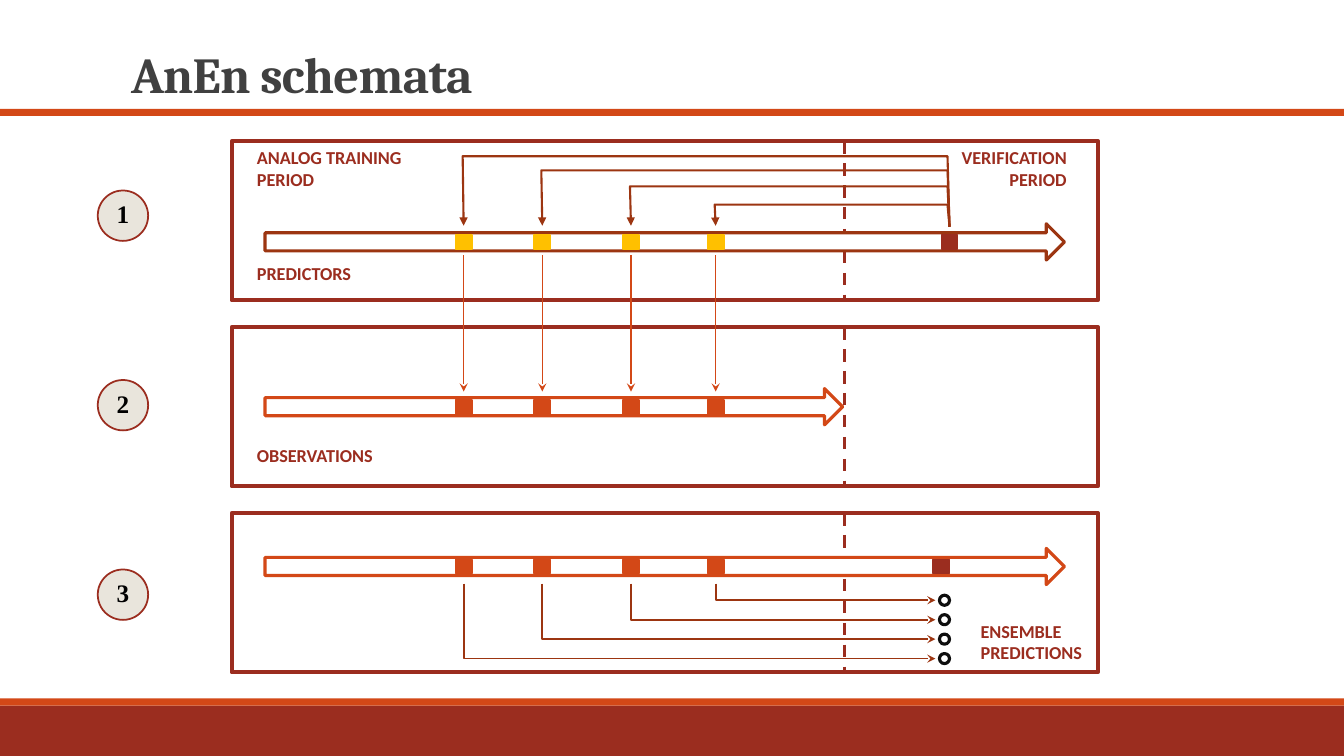
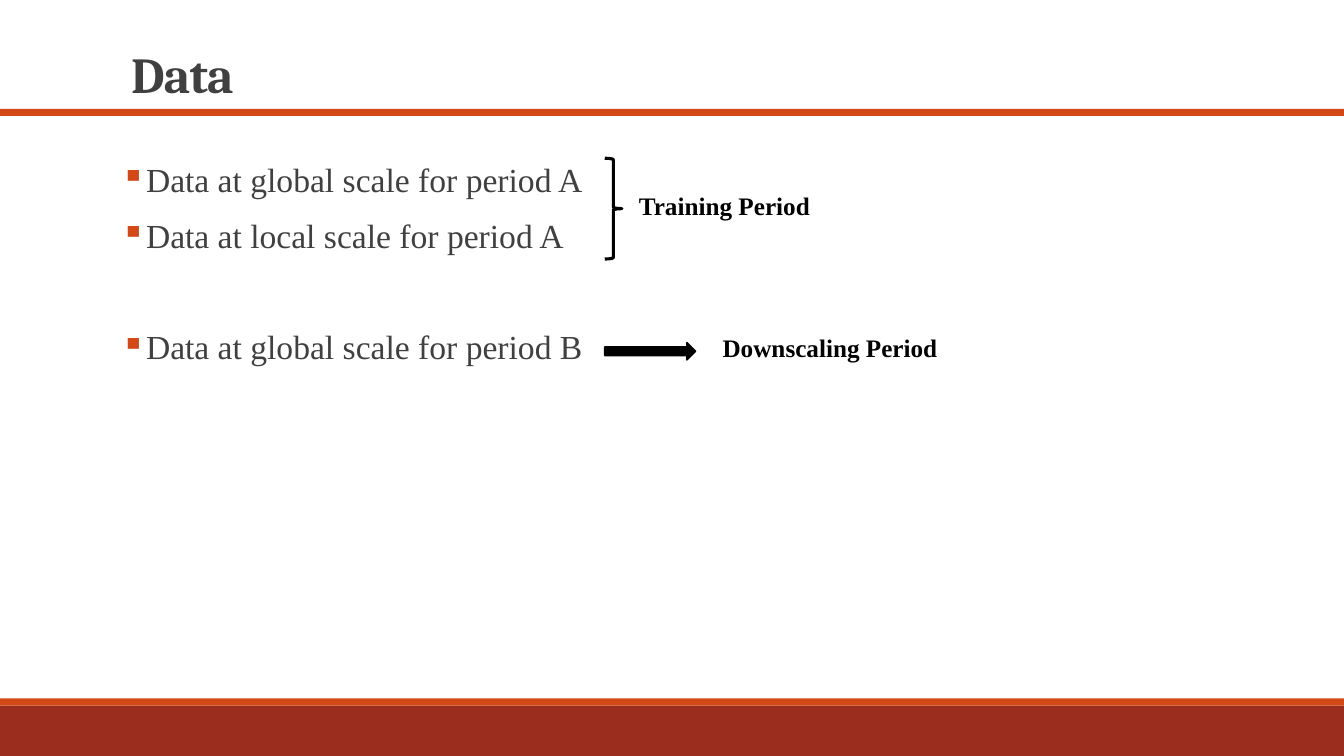
from lxml import etree
from pptx import Presentation, util as u
from pptx.dml.color import RGBColor
from pptx.enum import dml, shapes, text
from pptx.oxml import ns

CELL = u.Inches(0.1)
COLS, ROWS = 133.33, 75
RED, ORANGE, RUST, GOLD = "9B2D1F", "D34817", "9C3511", "FFC000"
WHITE, BLACK, GREY, SAND, INK = "FFFFFF", "000000", "404040", "E9E5DC", "0D0D0D"
TIMES = "Times New Roman"
KIND = shapes.MSO_SHAPE
ALIGN = text.PP_ALIGN
ANCHOR = text.MSO_ANCHOR
MARKS = [23, 30.8, 39.6, 48]
SPLIT = 60.8


def grid(*cells):
    """Turn grid cells into slide lengths."""
    return [round(c * CELL) for c in cells]


def paint(part, hue):
    """Give a fill, line or font colour a hex string."""
    if hasattr(part, "solid"):
        part.solid()
        part = part.fore_color
    elif hasattr(part, "color"):
        part = part.color
    part.rgb = RGBColor.from_string(hue)


def node(par, tag, **attrs):
    """Append a drawing element to its parent."""
    return etree.SubElement(par, ns.qn(tag), **attrs)


def stroke(item, hue, width, dash=None, tip=None):
    """Format a line with its dash and arrowhead."""
    paint(item.line, hue)
    item.line.width = u.Pt(width)
    if dash:
        item.line.dash_style = dash
    if tip:
        node(item.line._get_or_add_ln(), "a:tailEnd", type=tip)


def shape(slide, kind, box, fill=None, line=None, width=1.25):
    """Draw a preset shape in a box of cells."""
    item = slide.shapes.add_shape(kind, *grid(*box))
    item.shadow.inherit = False
    if fill:
        paint(item.fill, fill)
    else:
        item.fill.background()
    if line:
        stroke(item, line, width)
    else:
        item.line.fill.background()
    return item


def line(slide, start, end, hue, width, **style):
    """Draw a straight line between two cells."""
    item = slide.shapes.add_connector(
        shapes.MSO_CONNECTOR.STRAIGHT, *grid(*start, *end))
    stroke(item, hue, width, **style)
    node(item._element.spPr, "a:effectLst")


def route(slide, points, hue, width, tip):
    """Draw an open bent arrow through points."""
    dots = [grid(*p) for p in points]
    pen = slide.shapes.build_freeform(*dots[0], scale=1.0)
    pen.add_line_segments(dots[1:], close=False)
    item = pen.convert_to_shape()
    item.shadow.inherit = False
    item.fill.background()
    stroke(item, hue, width, tip=tip)


def write(par, words, font="Calibri", size=13, hue=RED, bold=True,
          align=ALIGN.LEFT, space=None):
    """Put formatted words in a paragraph."""
    par.alignment = align
    run = par.add_run()
    run.text = words
    run.font.name, run.font.size, run.font.bold = font, u.Pt(size), bold
    paint(run.font, hue)
    if space:
        run._r.get_or_add_rPr().set("spc", str(space))


def label(slide, box, words, **style):
    """Add a wrapped text box with one paragraph."""
    frame = slide.shapes.add_textbox(*grid(*box)).text_frame
    frame.word_wrap = True
    write(frame.paragraphs[0], words, **style)


def bands(slide, layout):
    """Place the shared bands on the layout."""
    for top, high, hue in ((70, 5, RED), (69.3, 0.7, ORANGE), (10.8, 0.7, ORANGE)):
        band = shape(slide, KIND.RECTANGLE, (0, top, COLS, high), hue)
        layout.shapes.element.append(band._element)


def page(deck, words):
    """Add a slide and set its title."""
    slide = deck.slides.add_slide(deck.slide_layouts[5])
    title = slide.shapes.title
    title.left, title.top, title.width, title.height = grid(12, 3.1, 110, 7.7)
    title.text_frame.vertical_anchor = ANCHOR.BOTTOM
    par = title.text_frame.paragraphs[0]
    par.line_spacing = 0.85
    write(par, words, font="Cambria", size=36, hue=GREY, space=-50)
    return slide


def panel(slide, x, y):
    """Draw a framed panel with its period split."""
    shape(slide, KIND.RECTANGLE, (x, y, 85.9, 15.8), line=RED, width=3)
    line(slide, (x + SPLIT, y), (x + SPLIT, y + 16), RED, 2.25,
         dash=dml.MSO_LINE.DASH)


def track(slide, x, y, wide, edge, hue, last=None):
    """Draw a time arrow with its marked moments."""
    shape(slide, KIND.RIGHT_ARROW, (x + 3.3, y, wide, 3.6), WHITE, edge, 2.25)
    spots = [(m, hue) for m in MARKS] + ([(last, RED)] if last else [])
    for mid, tint in spots:
        shape(slide, KIND.RECTANGLE, (x + mid - 0.8, y + 1.1, 1.6, 1.4), tint, tint)


def badge(slide, x, y, words):
    """Draw a numbered circle."""
    item = shape(slide, KIND.OVAL, (x, y, 5, 5), SAND, RED)
    frame = item.text_frame
    frame.margin_left = frame.margin_right = 0
    frame.margin_top, frame.margin_bottom = 0, u.Pt(3)
    frame.vertical_anchor = ANCHOR.MIDDLE
    write(frame.paragraphs[0], words, font=TIMES, size=18, hue=BLACK,
          align=ALIGN.CENTER)


def train(slide, x, y):
    """Fill the panel of predictors."""
    label(slide, (x + 1.5, y, 17, 5.4), "ANALOG TRAINING PERIOD")
    label(slide, (x + 66.8, y, 17, 5.4), "VERIFICATION PERIOD", align=ALIGN.RIGHT)
    for mark, rise in zip(MARKS, (1.5, 2.9, 4.5, 6.3)):
        route(slide, [(x + 71.2, y + 8.5), (x + 71, y + rise),
                      (x + mark - 0.1, y + rise), (x + mark, y + 8.4)],
              RUST, 1.5, "triangle")
    track(slide, x, y + 8.2, 79.3, RUST, GOLD, 71.2)
    label(slide, (x + 1.5, y + 11.5, 17, 3.2), "PREDICTORS")


def observe(slide, x, y):
    """Fill the panel of observations."""
    label(slide, (x + 1.5, y + 11.1, 17, 3.2), "OBSERVATIONS")
    track(slide, x, y + 6.1, 57.3, ORANGE, ORANGE)
    for mark in MARKS:
        line(slide, (x + mark, y - 7.1), (x + mark, y + 6.4), ORANGE, 1,
             tip="stealth")


def predict(slide, x, y):
    """Fill the panel of ensemble predictions."""
    track(slide, x, y + 3.5, 79.3, ORANGE, ORANGE, 70.4)
    for step, mark in enumerate(reversed(MARKS)):
        level = y + 8.65 + 1.93 * step
        route(slide, [(x + mark, y + 7), (x + mark, level), (x + 69.8, level)],
              RUST, 1.25, "stealth")
        shape(slide, KIND.OVAL, (x + 70.2, level - 0.5, 1, 1), WHITE, INK, 2.25)
    label(slide, (x + 73.3, y + 10.1, 17, 5.4), "ENSEMBLE PREDICTIONS")


def schema(deck):
    """Build the slide of three stacked panels."""
    slide = page(deck, "AnEn schemata")
    bands(slide, deck.slide_layouts[5])
    for row, fill in enumerate((train, observe, predict)):
        x, y = 23, 14 + 18.45 * row
        panel(slide, x, y)
        fill(slide, x, y)
        badge(slide, 9.7, 18.9 + 18.8 * row, str(row + 1))


def points(slide, box, rows):
    """Write a bulleted list of words and space before."""
    frame = slide.shapes.add_textbox(*grid(*box)).text_frame
    frame.word_wrap = True
    frame.margin_left = frame.margin_right = 0
    for at, (words, gap) in enumerate(rows):
        par = frame.add_paragraph() if at else frame.paragraphs[0]
        par.line_spacing = 0.9
        par.space_before, par.space_after = u.Pt(gap), u.Pt(2)
        write(par, words, font=TIMES, size=24, hue=GREY, bold=False)
        props = par._p.get_or_add_pPr()
        hang = u.Inches(0.19)
        props.set("marL", str(hang))
        props.set("indent", str(-hang))
        node(node(props, "a:buClr"), "a:srgbClr", val=ORANGE)
        node(props, "a:buChar", char="▪")


def data(deck):
    """Build the slide of data periods."""
    slide = page(deck, "Data")
    x, y = 12, 15.7
    points(slide, (x, y, 110, 48.6), [
        ("Data at global scale for period A", 12),
        ("Data at local scale for period A", 12),
        ("Data at global scale for period B", 52)])
    shape(slide, KIND.RIGHT_BRACE, (x + 48, y, 1.7, 10), line=BLACK, width=2.25)
    shape(slide, KIND.RIGHT_ARROW, (x + 48, y + 18.3, 9, 1.7), BLACK, BLACK)
    for left, top, words in ((50.4, 2.7, "Training Period"),
                             (58.7, 16.8, "Downscaling Period")):
        label(slide, (x + left, y + top, 26, 4), words,
              font=TIMES, size=18, hue=BLACK)


def main():
    """Build and save the deck."""
    deck = Presentation()
    deck.slide_width, deck.slide_height = grid(COLS, ROWS)
    schema(deck)
    data(deck)
    deck.save("out.pptx")


if __name__ == "__main__":
    main()
